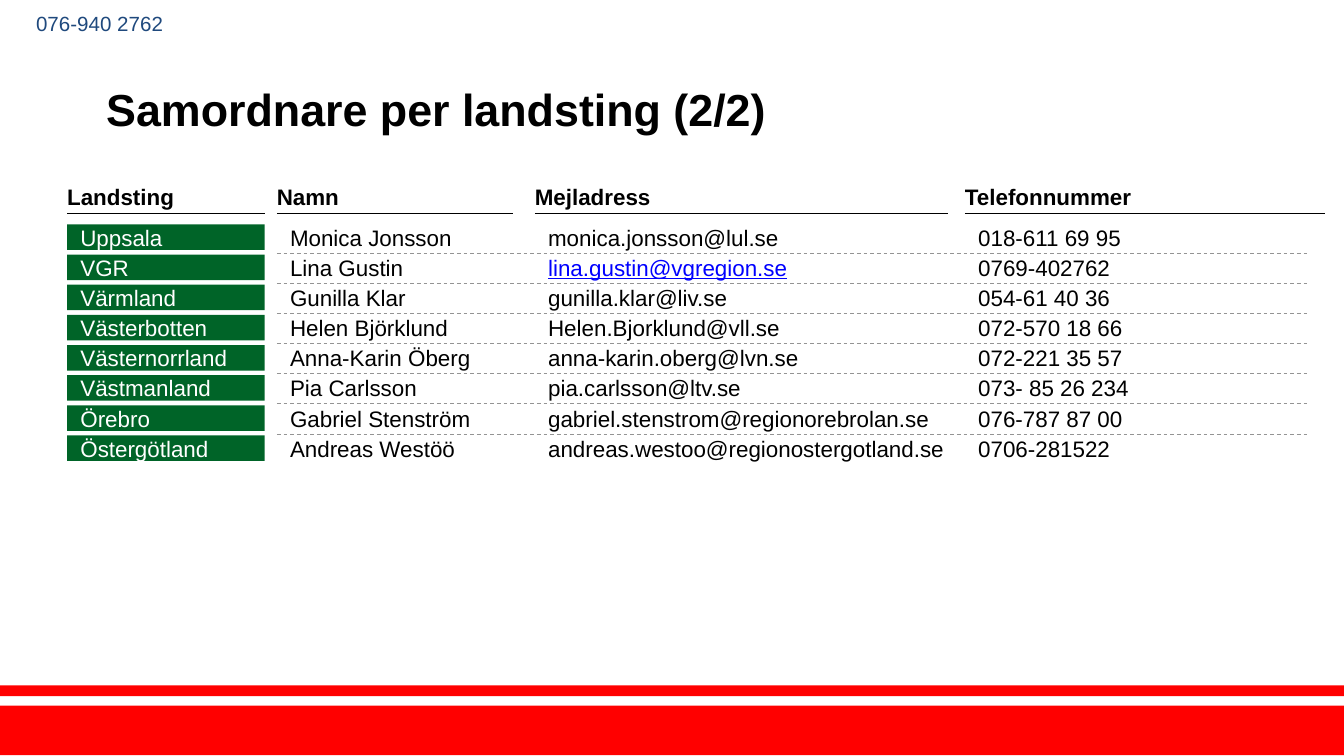
from pptx import Presentation
from pptx.dml.color import RGBColor
from pptx.enum.dml import MSO_LINE
from pptx.enum.shapes import MSO_CONNECTOR, MSO_SHAPE
from pptx.enum.text import MSO_ANCHOR, MSO_AUTO_SIZE, PP_ALIGN
from pptx.oxml.ns import qn
from pptx.util import Inches, Pt
from lxml.etree import SubElement

HUES = {"ink": "000000", "white": "FFFFFF", "red": "FF0000", "green": "006428",
        "grey": "949494", "link": "0000FF", "navy": "1F497D"}
COLS = [("Landsting", 0.5, 1.47, 1.47), ("Namn", 2.06, 1.76, 1.76),
        ("Mejladress", 3.98, 3.07, 3.15), ("Telefonnummer", 7.18, 2.68, 1.76)]
ROWS = [
    ("Uppsala", "Monica Jonsson", "monica.jonsson@lul.se", "018-611 69 95"),
    ("VGR", "Lina Gustin", "lina.gustin@vgregion.se", "0769-402762"),
    ("Värmland", "Gunilla Klar", "gunilla.klar@liv.se", "054-61 40 36"),
    ("Västerbotten", "Helen Björklund", "Helen.Bjorklund@vll.se", "072-570 18 66"),
    ("Västernorrland", "Anna-Karin Öberg", "anna-karin.oberg@lvn.se", "072-221 35 57"),
    ("Västmanland", "Pia Carlsson", "pia.carlsson@ltv.se", "073- 85 26 234"),
    ("Örebro", "Gabriel Stenström", "gabriel.stenstrom@regionorebrolan.se", "076-787 87 00"),
    ("Östergötland", "Andreas Westöö", "andreas.westoo@regionostergotland.se", "0706-281522"),
]
TOP, HIGH = 1.67, 0.19
STEP = (3.24 - TOP) / (len(ROWS) - 1)


def tint(hue):
    """Return the named colour."""
    return RGBColor.from_string(HUES[hue])


def write(shape, text, size=12, hue="ink", bold=False, line=False,
          inset=0.1, anchor=MSO_ANCHOR.MIDDLE, wrap=True, lead=None):
    """Put one formatted paragraph into a shape."""
    frame = shape.text_frame
    frame.auto_size = MSO_AUTO_SIZE.NONE
    frame.word_wrap = wrap
    frame.vertical_anchor = anchor
    frame.margin_left = frame.margin_right = Inches(inset)
    frame.margin_top = frame.margin_bottom = 0
    para = frame.paragraphs[0]
    para.alignment = PP_ALIGN.LEFT
    para.line_spacing = lead
    run = para.add_run()
    run.text = text
    font = run.font
    font.name, font.size, font.bold = "Arial", Pt(size), bold
    font.underline = line
    font.color.rgb = tint(hue)


def label(slide, text, x, y, w, h, **form):
    """Add a text box."""
    box = slide.shapes.add_textbox(Inches(x), Inches(y), Inches(w), Inches(h))
    write(box, text, **form)


def block(slide, x, y, w, h, hue):
    """Add a plain filled rectangle."""
    rect = slide.shapes.add_shape(
        MSO_SHAPE.RECTANGLE, Inches(x), Inches(y), Inches(w), Inches(h))
    rect.shadow.inherit = False
    rect.fill.solid()
    rect.fill.fore_color.rgb = tint(hue)
    rect.line.fill.background()
    return rect


def rule(slide, x, y, end, hue="ink", width=0.75, dash=None):
    """Add a level line."""
    link = slide.shapes.add_connector(
        MSO_CONNECTOR.STRAIGHT, Inches(x), Inches(y), Inches(end), Inches(y))
    link.line.color.rgb = tint(hue)
    link.line.width = Pt(width)
    link.line.dash_style = dash
    SubElement(link._element.spPr, qn("a:effectLst"))


def head(slide):
    """Set the title and the column heads."""
    title = slide.shapes.title
    title.left, title.top = Inches(0.69), Inches(0.29)
    title.width, title.height = Inches(8.62), Inches(1.09)
    write(title, "Samordnare per landsting (2/2)", size=24, bold=True, lead=0.9)
    for name, x, wide, _ in COLS:
        label(slide, name, x, 1.36, wide, 0.2, bold=True, inset=0,
              anchor=MSO_ANCHOR.BOTTOM)
        rule(slide, x, 1.59, x + wide)


def entry(slide, row, y):
    """Add one county with its contact."""
    (_, x, wide, _), *rest = COLS
    write(block(slide, x, y, wide, HIGH, "green"), row[0], hue="white")
    for text, (_, x, _, wide) in zip(row[1:], rest):
        mark = text.startswith("lina.")
        label(slide, text, x, y, wide, HIGH, line=mark,
              hue="link" if mark else "ink")


def main():
    """Build and save the slide."""
    deck = Presentation()
    deck.slide_width, deck.slide_height = Inches(10), Inches(10) * 9 // 16
    slide = deck.slides.add_slide(deck.slide_layouts[5])
    block(slide, 0, 5.25, 10, 0.37, "red")
    block(slide, 0, 5.1, 10, 0.08, "red")
    head(slide)
    for num, row in enumerate(ROWS):
        y = TOP + num * STEP
        if num:
            rule(slide, 2.06, y - 0.01, 9.73, "grey", 0.5, MSO_LINE.DASH)
        entry(slide, row, y)
    label(slide, "076-940 2762", 0.17, 0.07, 1.2, 0.2, size=11, hue="navy",
          wrap=False)
    deck.save("out.pptx")


if __name__ == "__main__":
    main()
